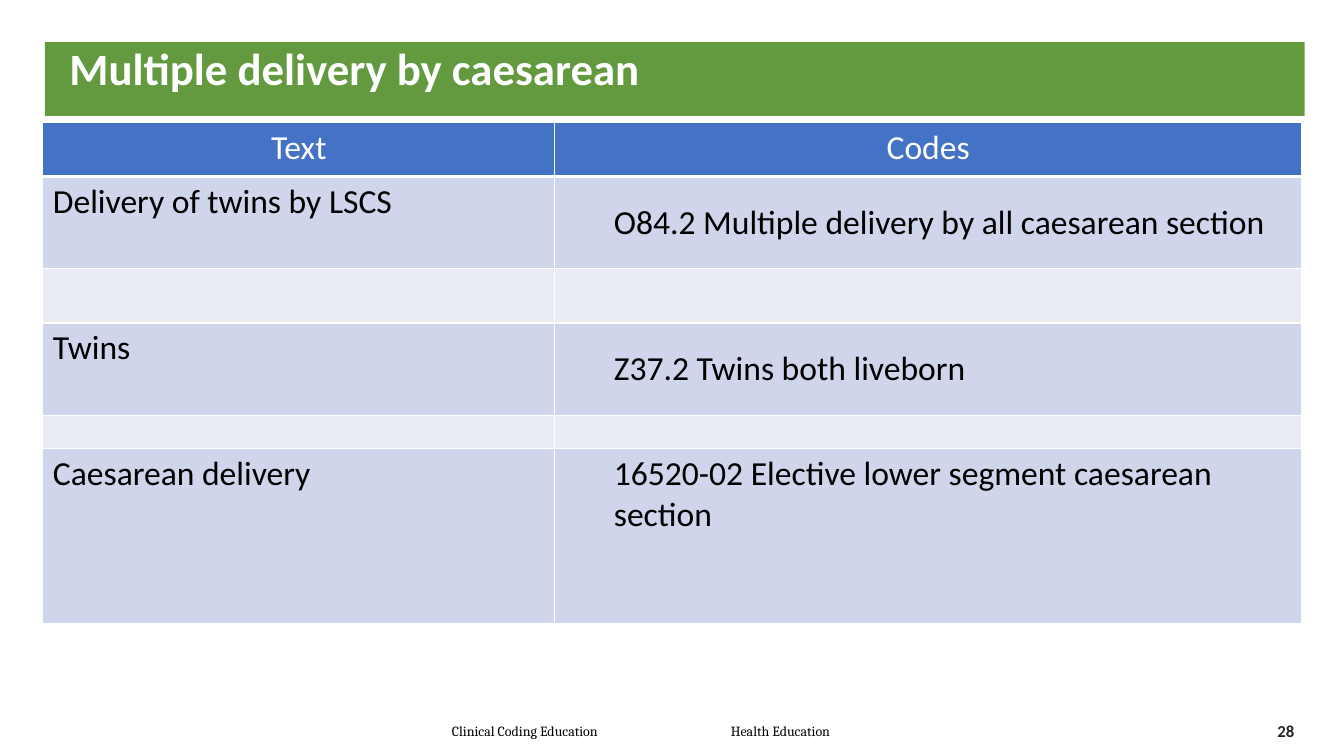
from dataclasses import dataclass

from lxml.etree import SubElement
from pptx import Presentation
from pptx.dml.color import RGBColor
from pptx.enum.text import MSO_ANCHOR, MSO_AUTO_SIZE, PP_ALIGN
from pptx.oxml.ns import qn
from pptx.slide import Slide
from pptx.table import _Cell
from pptx.text.text import TextFrame, _Paragraph
from pptx.util import Cm, Pt

COLOURS = {
    "title bar": "63993F",
    "header": "4472C4",
    "entry": "CFD5EA",
    "spacer": "E9EBF5",
    "white": "FFFFFF",
    "black": "000000",
    "page number": "262626",
}


@dataclass(frozen=True)
class TextStyle:
    size: float
    colour: str
    font: str = "Calibri"
    bold: bool = False


@dataclass(frozen=True)
class CodingRow:
    height: float
    fill: str
    text: str = ""
    code: str = ""
    code_anchor: MSO_ANCHOR = MSO_ANCHOR.MIDDLE


TITLE = TextStyle(32, "white", bold=True)
HEADER = TextStyle(24, "white")
ENTRY = TextStyle(24, "black")
FOOTER = TextStyle(10, "black", font="Cambria")
PAGE_NUMBER = TextStyle(12, "page number", bold=True)

COLUMN_WIDTHS = (12.9, 18.82)
CODE_INDENT = 1.24
CODING_ROWS = (
    CodingRow(1.37, "header", "Text", "Codes"),
    CodingRow(2.32, "entry", "Delivery of twins by LSCS",
              "O84.2 Multiple delivery by all caesarean section"),
    CodingRow(1.37, "spacer"),
    CodingRow(2.32, "entry", "Twins", "Z37.2 Twins both liveborn"),
    CodingRow(0.85, "spacer"),
    CodingRow(4.4, "entry", "Caesarean delivery",
              "16520-02 Elective lower segment caesarean section", MSO_ANCHOR.TOP),
)


def colour(name: str) -> RGBColor:
    return RGBColor.from_string(COLOURS[name])


def add_text(paragraph: _Paragraph, text: str, style: TextStyle) -> None:
    run = paragraph.add_run()
    run.text = text
    run.font.name = style.font
    run.font.size = Pt(style.size)
    run.font.bold = style.bold
    run.font.color.rgb = colour(style.colour)


def add_title(slide: Slide) -> None:
    title = slide.shapes.title
    title.left, title.top, title.width, title.height = Cm(1.13), Cm(1.06), Cm(31.75), Cm(1.86)
    title.fill.solid()
    title.fill.fore_color.rgb = colour("title bar")
    frame = title.text_frame
    frame.auto_size = MSO_AUTO_SIZE.NONE
    frame.vertical_anchor = MSO_ANCHOR.TOP
    frame.margin_left = Cm(0.62)
    paragraph = frame.paragraphs[0]
    paragraph.alignment = PP_ALIGN.LEFT
    paragraph.line_spacing = 0.9
    add_text(paragraph, "Multiple delivery by caesarean", TITLE)


def set_borders(cell: _Cell, widths: dict[str, float]) -> None:
    """Draw white cell edges; widths maps L, R, T, B (in that order) to points."""
    properties = cell._tc.get_or_add_tcPr()
    for edge, width in widths.items():
        line = SubElement(properties, qn(f"a:ln{edge}"), w=str(Pt(width)))
        fill = SubElement(line, qn("a:solidFill"))
        SubElement(fill, qn("a:srgbClr"), val=COLOURS["white"])


def fill_cell(cell: _Cell, row: CodingRow, text: str, is_code: bool) -> None:
    is_header = row.fill == "header"
    set_borders(cell, {"L": 1, "R": 1, "T": 1, "B": 3} if is_header
                else {"L": 1, "R": 1, "B": 1})
    cell.fill.solid()
    cell.fill.fore_color.rgb = colour(row.fill)
    if not text:
        cell.margin_top = cell.margin_bottom = 0
        return
    paragraph = cell.text_frame.paragraphs[0]
    if is_header:
        paragraph.alignment = PP_ALIGN.CENTER
    elif is_code:
        cell.margin_left = Cm(0.25 + CODE_INDENT)
        cell.vertical_anchor = row.code_anchor
    add_text(paragraph, text, HEADER if is_header else ENTRY)


def add_coding_table(slide: Slide) -> None:
    height = sum(row.height for row in CODING_ROWS)
    table = slide.shapes.add_table(
        len(CODING_ROWS), len(COLUMN_WIDTHS),
        Cm(1.08), Cm(3.08), Cm(sum(COLUMN_WIDTHS)), Cm(height),
    ).table
    for column, width in zip(table.columns, COLUMN_WIDTHS):
        column.width = Cm(width)
    for index, row in enumerate(CODING_ROWS):
        table.rows[index].height = Cm(row.height)
        fill_cell(table.cell(index, 0), row, row.text, is_code=False)
        fill_cell(table.cell(index, 1), row, row.code, is_code=True)


def add_bottom_box(slide: Slide, left: float, width: float) -> TextFrame:
    frame = slide.shapes.add_textbox(Cm(left), Cm(18), Cm(width), Cm(0.84)).text_frame
    frame.word_wrap = True
    frame.vertical_anchor = MSO_ANCHOR.MIDDLE
    return frame


def add_footer(slide: Slide) -> None:
    frame = add_bottom_box(slide, 10.54, 12.07)
    frame.margin_left = Cm(0.85)
    paragraph = frame.paragraphs[0]
    tabs = SubElement(paragraph._p.get_or_add_pPr(), qn("a:tabLst"))
    SubElement(tabs, qn("a:tab"), pos=str(Cm(7.03)), algn="l")
    add_text(paragraph, "Clinical Coding Education\tHealth Education", FOOTER)


def add_page_number(slide: Slide) -> None:
    paragraph = add_bottom_box(slide, 29.21, 3.66).paragraphs[0]
    paragraph.alignment = PP_ALIGN.RIGHT
    add_text(paragraph, "28", PAGE_NUMBER)


def main() -> None:
    presentation = Presentation()
    presentation.slide_width, presentation.slide_height = Cm(33.87), Cm(19.05)
    slide = presentation.slides.add_slide(presentation.slide_layouts[5])
    add_title(slide)
    add_coding_table(slide)
    add_footer(slide)
    add_page_number(slide)
    presentation.save("out.pptx")


if __name__ == "__main__":
    main()
